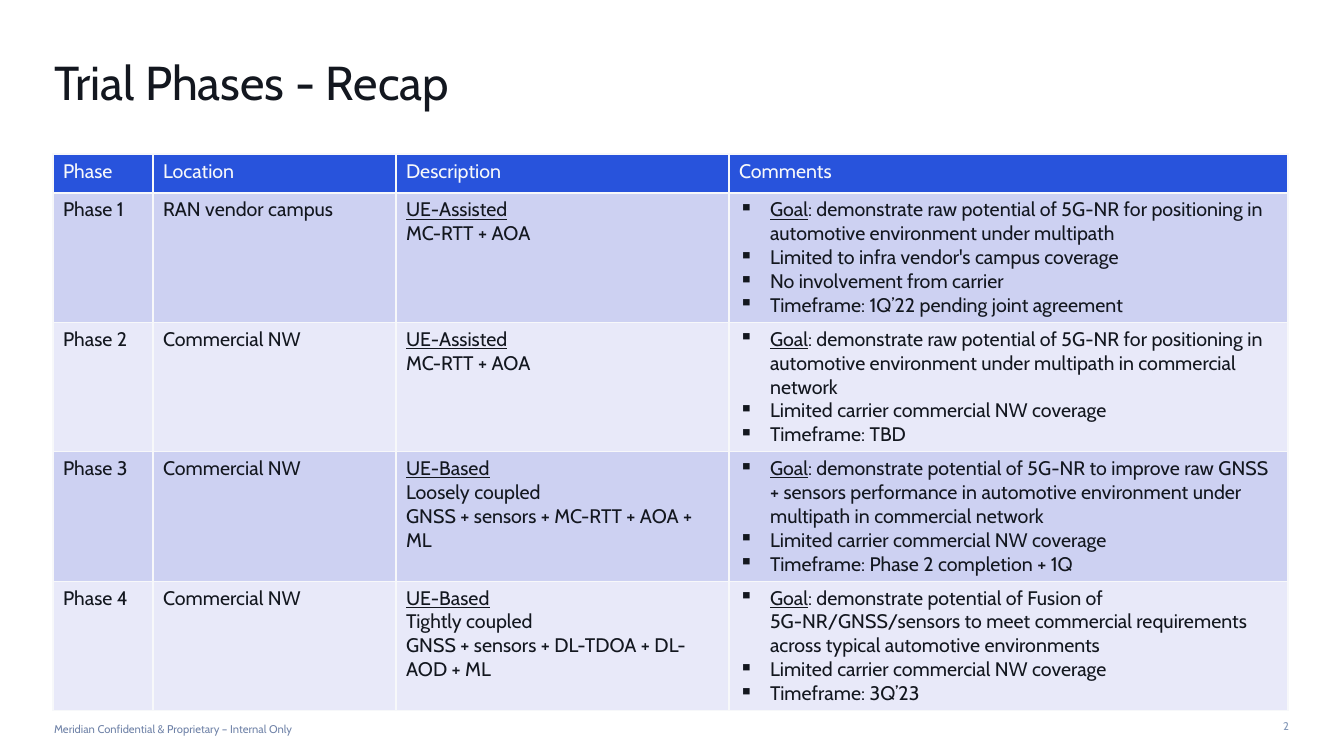
import lxml.etree
import pptx
import pptx.dml.color
import pptx.enum.text
import pptx.oxml.ns
import pptx.util

RGB = pptx.dml.color.RGBColor
ALIGN = pptx.enum.text.PP_ALIGN
BOTTOM = pptx.enum.text.MSO_ANCHOR.BOTTOM
INK = RGB(0x13, 0x17, 0x1F)
PALE = RGB(0xF7, 0xF8, 0xFA)
BLUE = RGB(0x28, 0x53, 0xDC)
BANDS = RGB(0xCD, 0xD1, 0xF2), RGB(0xE8, 0xE9, 0xF9)
SLATE = RGB(0x70, 0x83, 0xA8)
MIST = RGB(0x84, 0x98, 0xB8)
FONT = "Cabin"
SCALE = 914400 / 100.8

COLS = 100, 243, 333, 559
HEAD, BODY = 39, 129
COVER = "Limited carrier commercial NW coverage"
ROWS = [
    ("Phase", "Location", "Description", "Comments"),
    ("Phase 1", "RAN vendor campus", "UE-Assisted|\nMC-RTT + AOA",
     "Goal|: demonstrate raw potential of 5G-NR for positioning in automotive "
     "environment under multipath\nLimited to infra vendor's campus coverage\n"
     "No involvement from carrier\nTimeframe: 1Q’22 pending joint agreement"),
    ("Phase 2", "Commercial NW", "UE-Assisted|\nMC-RTT + AOA",
     "Goal|: demonstrate raw potential of 5G-NR for positioning in automotive "
     f"environment under multipath in commercial network\n{COVER}\nTimeframe: TBD"),
    ("Phase 3", "Commercial NW",
     "UE-Based|\nLoosely coupled\nGNSS + sensors + MC-RTT + AOA + ML",
     "Goal|: demonstrate potential of 5G-NR to improve raw GNSS + sensors performance "
     "in automotive environment under multipath in commercial network\n"
     f"{COVER}\nTimeframe: Phase 2 completion + 1Q"),
    ("Phase 4", "Commercial NW",
     "UE-Based|\nTightly coupled\nGNSS + sensors + DL-TDOA + DL-AOD + ML",
     "Goal|: demonstrate potential of Fusion of 5G-NR/GNSS/sensors to meet commercial "
     f"requirements across typical automotive environments\n{COVER}\nTimeframe: 3Q’23"),
]


def px(num):
    """Turn pixels into EMU."""
    return pptx.util.Emu(round(num * SCALE))


def style(run, size, color):
    """Set the font of a run."""
    run.font.name = FONT
    run.font.size = pptx.util.Pt(size)
    run.font.color.rgb = color


def label(shape, box, text, size, color, align=ALIGN.LEFT, space=1.0):
    """Place a shape in its box and fill it with one line of text."""
    shape.left, shape.top, shape.width, shape.height = map(px, box)
    frame = shape.text_frame
    frame.text = text
    frame.word_wrap = True
    frame.auto_size = pptx.enum.text.MSO_AUTO_SIZE.NONE
    frame.vertical_anchor = BOTTOM
    frame.margin_left = frame.margin_right = frame.margin_top = frame.margin_bottom = 0
    para = frame.paragraphs[0]
    para.alignment = align
    para.line_spacing = space
    style(para.runs[0], size, color)
    return para


def node(parent, tag, **attrs):
    """Add a drawing element to its parent."""
    return lxml.etree.SubElement(parent, pptx.oxml.ns.qn(tag), attrs)


def border(cell):
    """Draw thin lines on the four sides of a cell."""
    props = cell._tc.get_or_add_tcPr()
    for side in "LRTB":
        line = node(props, f"a:ln{side}", w="12700")
        node(node(line, "a:solidFill"), "a:srgbClr", val=str(PALE))


def bullet(para):
    """Give a paragraph a square bullet and a hanging indent."""
    props = para._p.get_or_add_pPr()
    props.set("marL", str(px(31)))
    props.set("indent", str(-px(31)))
    node(props, "a:buChar", char="▪")


def write(cell, text, color, listed):
    """Write the lines of a cell, underlining what stands before a bar."""
    frame = cell.text_frame
    for num, line in enumerate(text.split("\n")):
        para = frame.add_paragraph() if num else frame.paragraphs[0]
        if listed:
            bullet(para)
        lead, bar, rest = line.partition("|")
        for part, under in ((lead, bool(bar)), (rest, False)):
            if part:
                run = para.add_run()
                run.text = part
                style(run, 14, color)
                run.font.underline = under


def phases(slide, left, top):
    """Build the table of trial phases."""
    high = HEAD + BODY * (len(ROWS) - 1)
    frame = slide.shapes.add_table(len(ROWS), len(COLS), px(left), px(top),
                                   px(sum(COLS)), px(high))
    table = frame.table
    for col, wide in zip(table.columns, COLS):
        col.width = px(wide)
    for r, row in enumerate(ROWS):
        table.rows[r].height = px(BODY if r else HEAD)
        for c, text in enumerate(row):
            cell = table.cell(r, c)
            border(cell)
            cell.fill.solid()
            cell.fill.fore_color.rgb = BANDS[(r - 1) % 2] if r else BLUE
            write(cell, text, INK if r else PALE, r > 0 and c == len(COLS) - 1)
            if not r:
                for run in cell.text_frame.paragraphs[0].runs:
                    run.font.bold = False


def footer(slide, left, top, wide):
    """Add the notice and the page number along the bottom."""
    notice = slide.shapes.add_textbox(0, 0, 0, 0)
    para = label(notice, (left, top, 1127, 21),
                 "Meridian Confidential & Proprietary – Internal Only", 8, SLATE, space=1.07)
    para.space_after = pptx.util.Pt(2.2)
    page = slide.shapes.add_textbox(0, 0, 0, 0)
    label(page, (left + wide - 14, top + 3, 14, 15), "2", 8, MIST, ALIGN.RIGHT, 1.25)


def main():
    """Build the slide and save it."""
    deck = pptx.Presentation()
    deck.slide_width, deck.slide_height = px(1344), px(756)
    slide = deck.slides.add_slide(deck.slide_layouts[5])
    label(slide.shapes.title, (54, 60, 1233, 50), "Trial Phases - Recap", 34, INK, space=0.84)
    phases(slide, 53, 154)
    footer(slide, 54, 715, 1235)
    deck.save("out.pptx")


if __name__ == "__main__":
    main()
